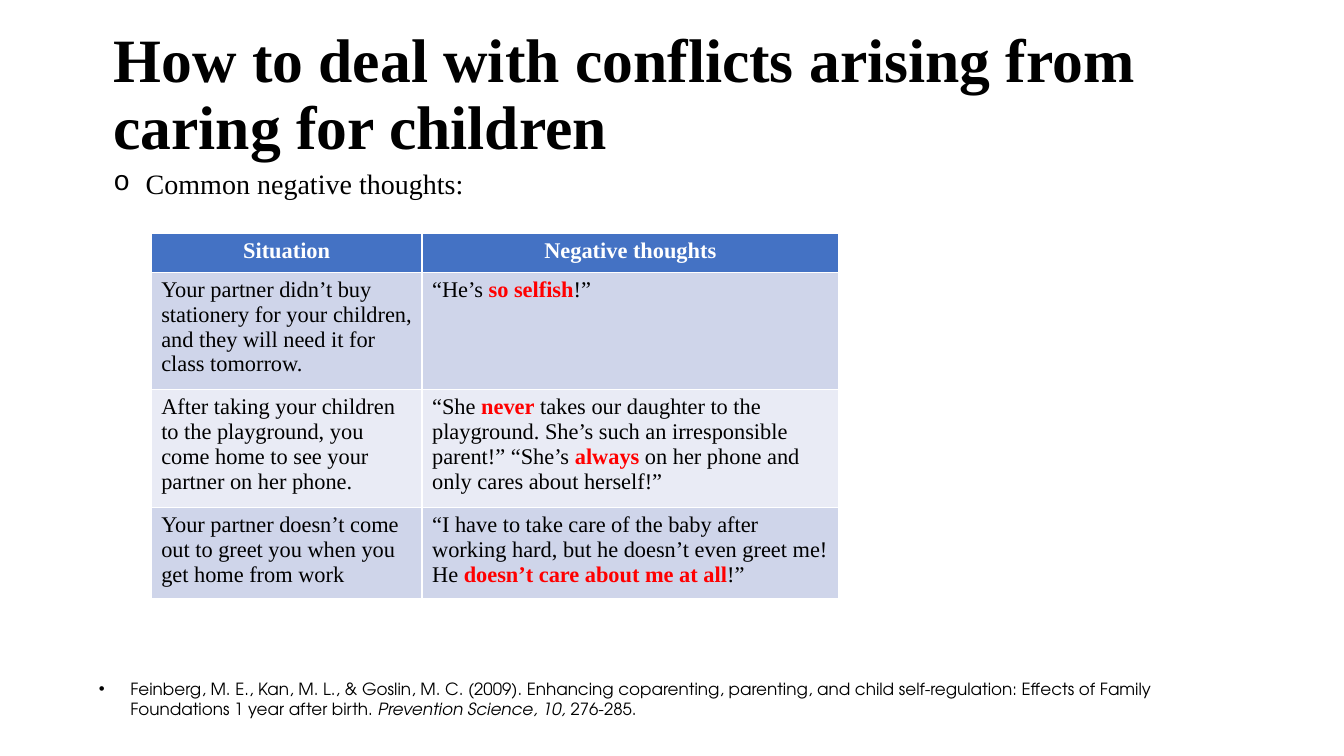
import pptx
import pptx.util
import pptx.dml.color
import pptx.enum.text
import pptx.oxml

Pt = pptx.util.Pt
RGB = pptx.dml.color.RGBColor
BLACK = RGB(0, 0, 0)
WHITE = RGB(255, 255, 255)
RED = RGB(255, 0, 0)
BLUE = RGB(0x44, 0x72, 0xC4)
BANDS = RGB(0xCF, 0xD5, 0xEA), RGB(0xE9, 0xEB, 0xF5)
SERIF = "Times New Roman"
SANS = "TeX Gyre Adventor"

HEADS = "Situation", "Negative thoughts"
# Words between asterisks stand out from the rest.
ROWS = [
    ("Your partner didn’t buy stationery for your children, and they will need it for class tomorrow.",
     "“He’s *so selfish*!”"),
    ("After taking your children to the playground, you come home to see your partner on her phone.",
     "“She *never* takes our daughter to the playground. She’s such an irresponsible parent!” "
     "“She’s *always *on her phone and only cares about herself!”"),
    ("Your partner doesn’t come out to greet you when you get home from work",
     "“I have to take care of the baby after working hard, but he doesn’t even greet me! "
     "He *doesn’t care about me at all*!”"),
]
SOURCE = ("Feinberg, M. E., Kan, M. L., & Goslin, M. C. (2009). Enhancing coparenting, parenting, "
          "and child self-regulation: Effects of Family Foundations 1 year after birth. "
          "*Prevention Science, 10, *276-285.")


def style(para, size, face=SERIF, color=BLACK, bold=False):
    font = para.font
    font.size, font.name, font.bold = Pt(size), face, bold
    font.color.rgb = color


def write(para, text, stress):
    """Add runs, calling stress on the font of each part between asterisks."""
    for i, part in enumerate(text.split("*")):
        run = para.add_run()
        run.text = part
        if i % 2:
            stress(run.font)


def alarm(font):
    font.bold = True
    font.color.rgb = RED


def slant(font):
    font.italic = True


def bullet(para, sign, indent, face):
    props = para._p.get_or_add_pPr()
    props.set("marL", str(Pt(indent)))
    props.set("indent", str(-Pt(indent)))
    for tag, key, value in (("buFont", "typeface", face), ("buChar", "char", sign)):
        item = pptx.oxml.parse_xml(
            f'<a:{tag} xmlns:a="http://schemas.openxmlformats.org/drawingml/2006/main" {key}="{value}"/>')
        props.append(item)


def frame(slide, box):
    text = slide.shapes.add_textbox(*map(Pt, box)).text_frame
    text.word_wrap = True
    return text


def title(slide, box):
    text = frame(slide, box)
    text.vertical_anchor = pptx.enum.text.MSO_ANCHOR.MIDDLE
    para = text.paragraphs[0]
    para.text = "How to deal with conflicts arising from caring for children"
    para.line_spacing = 0.9
    style(para, 44, bold=True)


def lead(slide, box):
    para = frame(slide, box).paragraphs[0]
    para.text = " Common negative thoughts:"
    para.line_spacing = 0.9
    para.space_before = Pt(10)
    style(para, 20)
    bullet(para, "o", 18, "Courier New")


def thoughts(slide, box):
    """Place the table of situations and the thoughts they raise."""
    table = slide.shapes.add_table(len(ROWS) + 1, len(HEADS), *map(Pt, box)).table
    for col, share in zip(table.columns, (0.394, 0.606)):
        col.width = Pt(round(box[2] * share, 1))
    for row, height in zip(table.rows, (28, 78.5, 78.5, 60)):
        row.height = Pt(height)
    for r, texts in enumerate([HEADS, *ROWS]):
        head = r == 0
        for c, text in enumerate(texts):
            cell = table.cell(r, c)
            cell.fill.solid()
            cell.fill.fore_color.rgb = BLUE if head else BANDS[(r - 1) % 2]
            para = cell.text_frame.paragraphs[0]
            write(para, text, alarm)
            style(para, 16, color=WHITE if head else BLACK, bold=head)
            # Header bold and colour also hold on runs, above the table style.
            for run in para.runs:
                if run.font.bold is None:
                    run.font.bold = head
                    run.font.color.rgb = WHITE if head else BLACK
            if head:
                para.alignment = pptx.enum.text.PP_ALIGN.CENTER


def cite(slide, box):
    para = frame(slide, box).paragraphs[0]
    write(para, SOURCE, slant)
    style(para, 12, SANS)
    bullet(para, "•", 22.5, "Arial")


def main():
    deck = pptx.Presentation()
    deck.slide_width, deck.slide_height = Pt(960), Pt(540)
    slide = deck.slides.add_slide(deck.slide_layouts[6])
    title(slide, (74, 16.5, 828, 104.5))
    thoughts(slide, (108, 166.5, 491, 245))
    cite(slide, (63.5, 481.5, 828, 36))
    lead(slide, (74, 118, 828, 44.5))
    deck.save("out.pptx")


if __name__ == "__main__":
    main()
